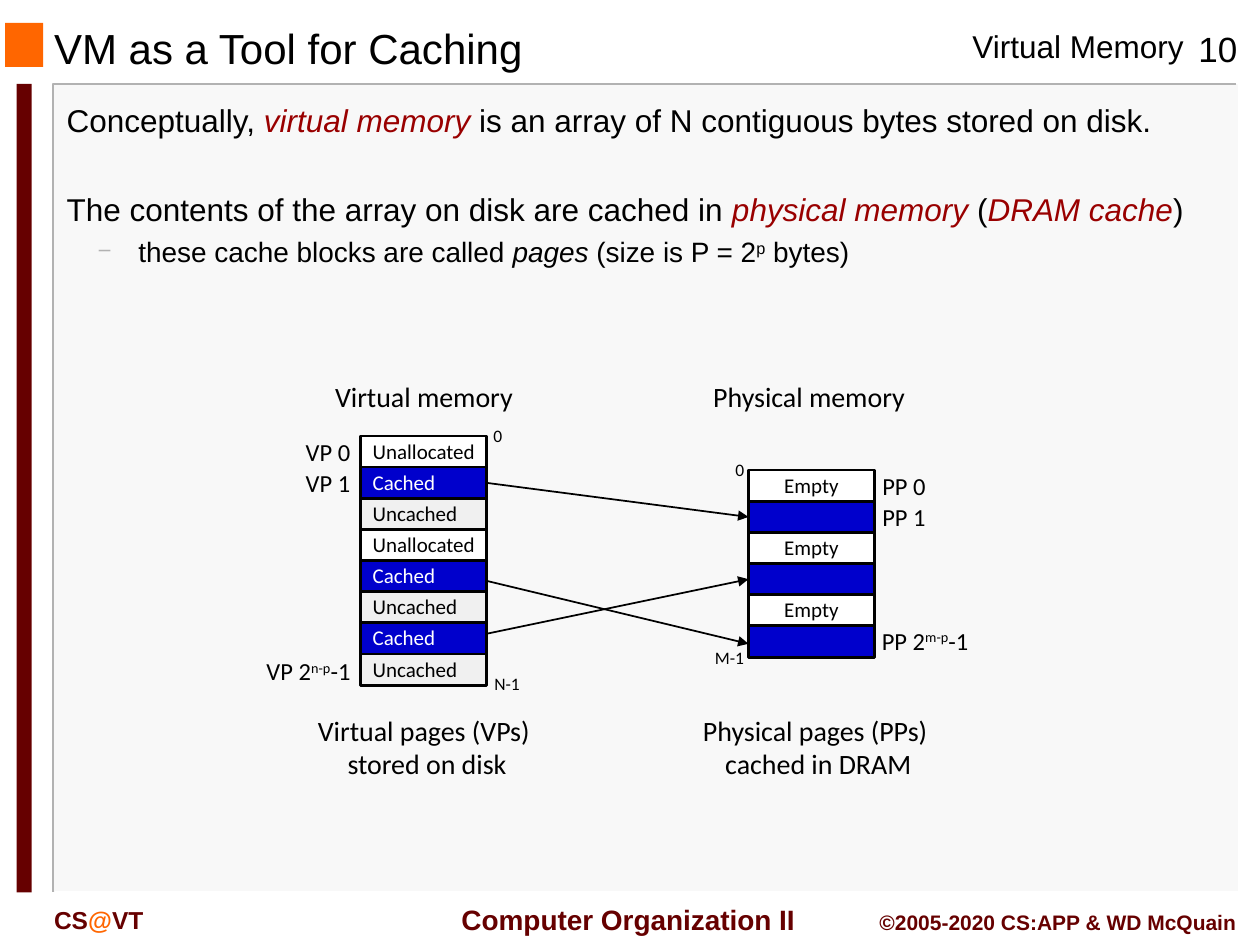
from dataclasses import dataclass

from lxml import etree
from pptx import Presentation
from pptx.dml.color import RGBColor
from pptx.enum.shapes import MSO_CONNECTOR, MSO_SHAPE
from pptx.enum.text import MSO_ANCHOR, PP_ALIGN
from pptx.oxml.ns import qn
from pptx.util import Pt

LEFT, CENTER, RIGHT = PP_ALIGN.LEFT, PP_ALIGN.CENTER, PP_ALIGN.RIGHT
TOP, MIDDLE = MSO_ANCHOR.TOP, MSO_ANCHOR.MIDDLE
RECT, STRAIGHT = MSO_SHAPE.RECTANGLE, MSO_CONNECTOR.STRAIGHT

COLORS = {
    "black": "000000", "white": "FFFFFF", "panel": "F8F8F8", "gray": "B2B2B2",
    "orange": "FF6600", "maroon": "660000", "term": "990000",
    "blue": "0000CC", "pale": "F0F0F0",
}
CELL_W, CELL_H, PITCH = 72, 18, 17.8
VIRTUAL_X, VIRTUAL_Y = 205.9, 249.1
PHYSICAL_X, PHYSICAL_Y = 427.7, 268.6
CELL_STYLES = {
    "Unallocated": ("white", "black"), "Cached": ("blue", "white"),
    "Uncached": ("pale", "black"), "Empty": ("white", "black"),
    "": ("blue", "white"),
}
VIRTUAL_PAGES = ["Unallocated", "Cached", "Uncached", "Unallocated",
                 "Cached", "Uncached", "Cached", "Uncached"]
PHYSICAL_PAGES = ["Empty", ""] * 3


@dataclass
class Run:
    text: str
    color: str = ""
    italic: bool = False
    sup: bool = False


@dataclass
class Para:
    runs: list[Run]
    size: float
    before: float = 0
    dash: bool = False


@dataclass
class Label:
    x: float
    y: float
    w: float
    h: float
    paras: list[Para]
    font: str = "Calibri"
    color: str = "black"
    align: PP_ALIGN = CENTER
    anchor: MSO_ANCHOR = MIDDLE
    spacing: float = 0.98
    bold: bool = False
    wrap: bool = False


@dataclass
class Arrow:
    virtual: int
    physical: int
    start_shift: float = 0
    end_shift: float = 0


def rgb(name: str) -> RGBColor:
    return RGBColor.from_string(COLORS[name])


def plain(size: float, *lines: str) -> list[Para]:
    return [Para([Run(line)], size) for line in lines]


def power(base: str, exponent: str) -> list[Para]:
    return [Para([Run(base), Run(exponent, sup=True), Run("-1")], 14)]


def row_y(top: float, row: int) -> float:
    return top + row * PITCH


def write(tf, label: Label) -> None:
    tf.word_wrap = label.wrap
    tf.vertical_anchor = label.anchor
    for i, para in enumerate(label.paras):
        p = tf.paragraphs[0] if i == 0 else tf.add_paragraph()
        p.alignment = label.align
        p.line_spacing = label.spacing
        p.space_before = Pt(para.before)
        if para.dash:
            add_dash(p)
        for run in para.runs:
            r = p.add_run()
            r.text = run.text
            r.font.name, r.font.size = label.font, Pt(para.size)
            r.font.bold, r.font.italic = label.bold, run.italic
            r.font.color.rgb = rgb(run.color or label.color)
            if run.sup:
                r.font._element.set("baseline", "30000")


def add_dash(p) -> None:
    p.level = 1
    pPr = p._p.get_or_add_pPr()
    pPr.set("marL", str(Pt(41)))
    pPr.set("indent", str(Pt(-22.5)))
    clr = etree.SubElement(pPr, qn("a:buClr"))
    etree.SubElement(clr, qn("a:srgbClr"), val=COLORS["gray"])
    etree.SubElement(pPr, qn("a:buSzPct"), val="75000")
    etree.SubElement(pPr, qn("a:buChar"), char="–")


def add_label(s, label: Label) -> None:
    sp = s.shapes.add_textbox(Pt(label.x), Pt(label.y), Pt(label.w), Pt(label.h))
    write(sp.text_frame, label)


def add_rect(s, x: float, y: float, w: float, h: float, fill: str):
    sp = s.shapes.add_shape(RECT, Pt(x), Pt(y), Pt(w), Pt(h))
    sp.shadow.inherit = False
    sp.fill.solid()
    sp.fill.fore_color.rgb = rgb(fill)
    sp.line.fill.background()
    return sp


def add_edge(s, points: list[tuple[float, float]], color: str) -> None:
    first, *rest = [(Pt(x), Pt(y)) for x, y in points]
    builder = s.shapes.build_freeform(*first)
    builder.add_line_segments(rest, close=False)
    sp = builder.convert_to_shape()
    sp.shadow.inherit = False
    sp.fill.background()
    sp.line.color.rgb = rgb(color)
    sp.line.width = Pt(1)


def add_pages(s, x: float, top: float, pages: list[str], align: PP_ALIGN) -> list:
    cells = []
    for row, text in enumerate(pages):
        fill, color = CELL_STYLES[text]
        sp = add_rect(s, x, row_y(top, row), CELL_W, CELL_H, fill)
        sp.line.color.rgb = rgb("black")
        sp.line.width = Pt(1.5)
        if text:
            write(sp.text_frame, Label(0, 0, 0, 0, plain(12, text), color=color, align=align))
        cells.append(sp)
    return cells


def add_arrow(s, arrow: Arrow, virtual: list, physical: list) -> None:
    y1 = row_y(VIRTUAL_Y, arrow.virtual) + CELL_H / 2 + arrow.start_shift
    y2 = row_y(PHYSICAL_Y, arrow.physical) + CELL_H / 2 + arrow.end_shift
    cx = s.shapes.add_connector(
        STRAIGHT, Pt(VIRTUAL_X + CELL_W), Pt(y1), Pt(PHYSICAL_X), Pt(y2))
    if not arrow.start_shift:
        cx.begin_connect(virtual[arrow.virtual], 3)
    if not arrow.end_shift:
        cx.end_connect(physical[arrow.physical], 1)
    cx.line.color.rgb = rgb("black")
    cx.line.width = Pt(1)
    etree.SubElement(cx.line._get_or_add_ln(), qn("a:tailEnd"), type="triangle")
    etree.SubElement(cx._element.spPr, qn("a:effectLst"))


FRAME = dict(font="Arial", spacing=1.0)
FOOTER = dict(FRAME, color="maroon", bold=True)
ROW = dict(anchor=TOP, spacing=0.88)
BODY = [
    Para([Run("Conceptually,"), Run(" virtual memory ", "term", True),
          Run("is an array of N contiguous bytes stored on disk.")], 18),
    Para([Run("The contents of the array on disk are cached in "),
          Run("physical memory", "term", True), Run(" ("),
          Run("DRAM cache", "term", True), Run(")")], 18, before=29.4),
    Para([Run("these cache blocks are called "), Run("pages ", italic=True),
          Run("(size is P = 2"), Run("p", sup=True), Run(" bytes)")], 16, 4, dash=True),
]
LABELS = [
    Label(548.6, 12.2, 135.4, 28.8, plain(18, "Virtual Memory"), align=LEFT, anchor=TOP, **FRAME),
    Label(671.8, 12.2, 48.2, 31, plain(20, "10"), anchor=TOP, wrap=True, **FRAME),
    Label(250.6, 511.9, 212.4, 26.6, plain(16, " Computer Organization II"), **FOOTER),
    Label(23.8, 513.4, 108, 24, [Para([Run("CS"), Run("@", "orange"), Run("VT")], 14)],
          align=LEFT, anchor=TOP, wrap=True, **FOOTER),
    Label(491.8, 516.2, 221.8, 21.6, plain(12, "©2005-2020 CS:APP & WD McQuain"),
          align=RIGHT, anchor=TOP, wrap=True, **FOOTER),
    Label(23.8, 13.7, 455.8, 27.4, plain(24, "VM as a Tool for Caching"),
          align=LEFT, wrap=True, **FRAME),
    Label(31, 54, 664.6, 104.4, BODY, align=LEFT, anchor=TOP, wrap=True, **FRAME),
    Label(182.2, 216, 120.2, 23.8, plain(16, "Virtual memory"), **ROW),
    Label(398.2, 216, 128.2, 23.8, plain(16, "Physical memory"), **ROW),
    Label(142.6, row_y(VIRTUAL_Y, 7), 64.8, 22.3, power("VP 2", "n-p"), align=RIGHT, **ROW),
    Label(496.8, row_y(PHYSICAL_Y, 5) - 1.5, 67, 22.3, power("PP 2", "m-p"), align=LEFT, **ROW),
    Label(274.3, 239.8, 20.2, 19.4, plain(10, "0")),
    Label(275, 381.6, 29.5, 19.4, plain(10, "N-1")),
    Label(412.6, 259.2, 20.2, 19.4, plain(10, "0")),
    Label(401, 366.5, 31.7, 19.4, plain(10, "M-1")),
    Label(173.5, 404.6, 141.1, 45.4, plain(16, "Virtual pages (VPs) ", "stored on disk")),
    Label(393.8, 404.6, 147.6, 45.4, plain(16, "Physical pages (PPs) ", "cached in DRAM")),
]
for row in range(2):
    LABELS += [
        Label(167, row_y(VIRTUAL_Y, row) - 0.7, 40.3, 22.3, plain(14, f"VP {row}"), align=RIGHT, **ROW),
        Label(496.8, row_y(PHYSICAL_Y, row) - 2.2, 39.6, 23.8, plain(14, f"PP {row}")),
    ]
ARROWS = [Arrow(1, 1), Arrow(4, 5, 2.6, 1.3), Arrow(6, 3, start_shift=-2.7)]


def main() -> None:
    """Build the virtual memory caching slide."""
    prs = Presentation()
    prs.slide_width, prs.slide_height = Pt(720), Pt(540)
    s = prs.slides.add_slide(prs.slide_layouts[6])
    add_rect(s, 31, 48.2, 676.8, 461.5, "panel")
    add_edge(s, [(706.5, 48.2), (30.2, 48.2), (30.2, 509.8)], "gray")
    add_edge(s, [(707.8, 48.2), (707.8, 509.8), (31.7, 509.8)], "white")
    add_rect(s, 2.9, 13, 21.8, 25.2, "orange")
    add_rect(s, 9.5, 48, 8.6, 462, "maroon")
    virtual = add_pages(s, VIRTUAL_X, VIRTUAL_Y, VIRTUAL_PAGES, LEFT)
    physical = add_pages(s, PHYSICAL_X, PHYSICAL_Y, PHYSICAL_PAGES, CENTER)
    for arrow in ARROWS:
        add_arrow(s, arrow, virtual, physical)
    for label in LABELS:
        add_label(s, label)
    prs.save("out.pptx")


if __name__ == "__main__":
    main()
